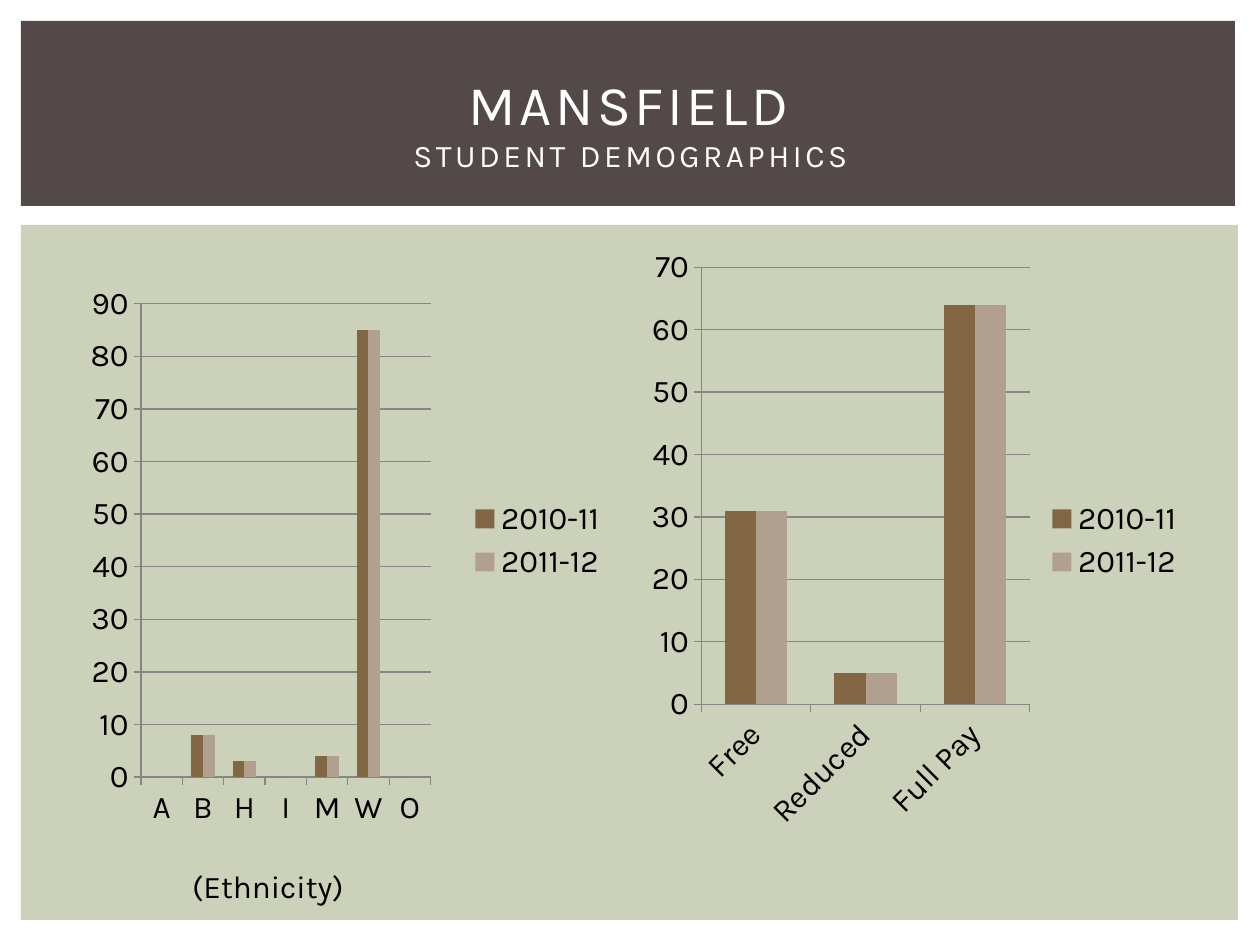
from dataclasses import dataclass

from lxml import etree
from pptx import Presentation
from pptx.chart.data import CategoryChartData
from pptx.dml.color import RGBColor
from pptx.enum.chart import XL_CHART_TYPE, XL_LEGEND_POSITION, XL_TICK_MARK
from pptx.enum.shapes import MSO_SHAPE
from pptx.enum.text import MSO_ANCHOR, PP_ALIGN
from pptx.oxml import parse_xml
from pptx.util import Emu, Pt

COLUMNS = XL_CHART_TYPE.COLUMN_CLUSTERED
LEGEND_RIGHT = XL_LEGEND_POSITION.RIGHT
TICK_OUT = XL_TICK_MARK.OUTSIDE
RECTANGLE = MSO_SHAPE.RECTANGLE
MIDDLE, TOP = MSO_ANCHOR.MIDDLE, MSO_ANCHOR.TOP
CENTER = PP_ALIGN.CENTER

PX_PER_INCH = 126
FONT = "Karla"
BLACK, WHITE, GRAY = "000000", "FFFFFF", "868686"
BANNER, PANEL = "534949", "CCD1B9"
SERIES_COLORS = {"2010-11": "836643", "2011-12": "B2A08F"}
CHART_NS = "http://schemas.openxmlformats.org/drawingml/2006/chart"


@dataclass(frozen=True)
class Box:
    left: int
    top: int
    width: int
    height: int

    def emu(self) -> tuple[Emu, ...]:
        return tuple(px(n) for n in (self.left, self.top, self.width, self.height))


@dataclass(frozen=True)
class Line:
    text: str
    size: int


@dataclass(frozen=True)
class Demographic:
    """One chart; both school years have the same values."""
    box: Box
    categories: tuple[str, ...]
    values: tuple[int, ...]
    plot: tuple[float, ...]
    label_degrees: int = 0


BLOCKS = (
    (Box(21, 225, 1217, 695), PANEL),
    (Box(21, 21, 1214, 185), BANNER),
)
DEMOGRAPHICS = (
    Demographic(Box(63, 237, 557, 607), ("A", "B", "H", "I", "M", "W", "O"),
                (0, 8, 3, 0, 4, 85, 0), (0.14, 0.11, 0.52, 0.78)),
    Demographic(Box(640, 237, 557, 607), ("Free", "Reduced", "Full Pay"),
                (31, 5, 64), (0.11, 0.05, 0.59, 0.72), label_degrees=-45),
)


def px(length: int) -> Emu:
    return Emu(round(length * 914400 / PX_PER_INCH))


def color(code: str) -> RGBColor:
    return RGBColor.from_string(code)


def style_font(font, size: int, code: str) -> None:
    font.name, font.size = FONT, Pt(size)
    font.color.rgb = color(code)


def add_block(slide, box: Box, code: str) -> None:
    block = slide.shapes.add_shape(RECTANGLE, *box.emu())
    block.shadow.inherit = False
    block.fill.solid()
    block.fill.fore_color.rgb = color(code)
    block.line.fill.background()


def add_text(slide, box: Box, lines: tuple[Line, ...], *, code: str,
             anchor=TOP, spacing: int = 0) -> None:
    """Centred lines in one paragraph; spacing is in points."""
    frame = slide.shapes.add_textbox(*box.emu()).text_frame
    frame.word_wrap = True
    frame.vertical_anchor = anchor
    para = frame.paragraphs[0]
    para.alignment = CENTER
    for index, line in enumerate(lines):
        if index:
            para.add_line_break()
        span = para.add_run()
        span.text = line.text
        style_font(span.font, line.size, code)
        if spacing:
            span.font._element.set("spc", str(spacing * 100))


def set_plot_layout(chart, plot: tuple[float, ...]) -> None:
    """Fix the inner plot area as fractions of the chart."""
    area = chart._chartSpace.chart.plotArea
    for old in area.findall(f"{{{CHART_NS}}}layout"):
        area.remove(old)
    layout = parse_xml(f'<c:layout xmlns:c="{CHART_NS}"><c:manualLayout/></c:layout>')
    settings = [("layoutTarget", "inner"), ("xMode", "edge"), ("yMode", "edge")]
    settings += zip("xywh", plot)
    for name, value in settings:
        etree.SubElement(layout[0], f"{{{CHART_NS}}}{name}").set("val", str(value))
    area.insert(0, layout)


def add_demographic(slide, demographic: Demographic) -> None:
    data = CategoryChartData()
    data.categories = demographic.categories
    for year in SERIES_COLORS:
        data.add_series(year, demographic.values)
    chart = slide.shapes.add_chart(COLUMNS, *demographic.box.emu(), data).chart
    chart.has_title = False
    style_font(chart.font, 18, BLACK)
    chart.has_legend = True
    chart.legend.position = LEGEND_RIGHT
    chart.legend.include_in_layout = False
    set_plot_layout(chart, demographic.plot)

    columns = chart.plots[0]
    columns.gap_width, columns.overlap = 150, 0
    columns.vary_by_categories = False
    for series in columns.series:
        series.format.fill.solid()
        series.format.fill.fore_color.rgb = color(SERIES_COLORS[series.name])

    chart.value_axis.has_major_gridlines = True
    for axis in (chart.category_axis, chart.value_axis):
        axis.major_tick_mark = TICK_OUT
        style_font(axis.tick_labels.font, 18, BLACK)
    for part in (chart.category_axis, chart.value_axis, chart.value_axis.major_gridlines):
        part.format.line.color.rgb = color(GRAY)
        part.format.line.width = Pt(0.75)
    if demographic.label_degrees:
        body = chart.category_axis._element.xpath("c:txPr/a:bodyPr")[0]
        body.set("rot", str(demographic.label_degrees * 60000))


def main() -> None:
    deck = Presentation()
    deck.slide_width, deck.slide_height = px(1260), px(945)
    slide = deck.slides.add_slide(deck.slide_layouts[6])
    for box, code in BLOCKS:
        add_block(slide, box, code)
    for demographic in DEMOGRAPHICS:
        add_demographic(slide, demographic)
    add_text(slide, Box(53, 49, 1155, 145),
             (Line("MANSFIELD", 32), Line("STUDENT DEMOGRAPHICS", 18)),
             code=WHITE, anchor=MIDDLE, spacing=2)
    add_text(slide, Box(84, 861, 368, 50), (Line("(Ethnicity)", 18),), code=BLACK)
    deck.save("out.pptx")


if __name__ == "__main__":
    main()
